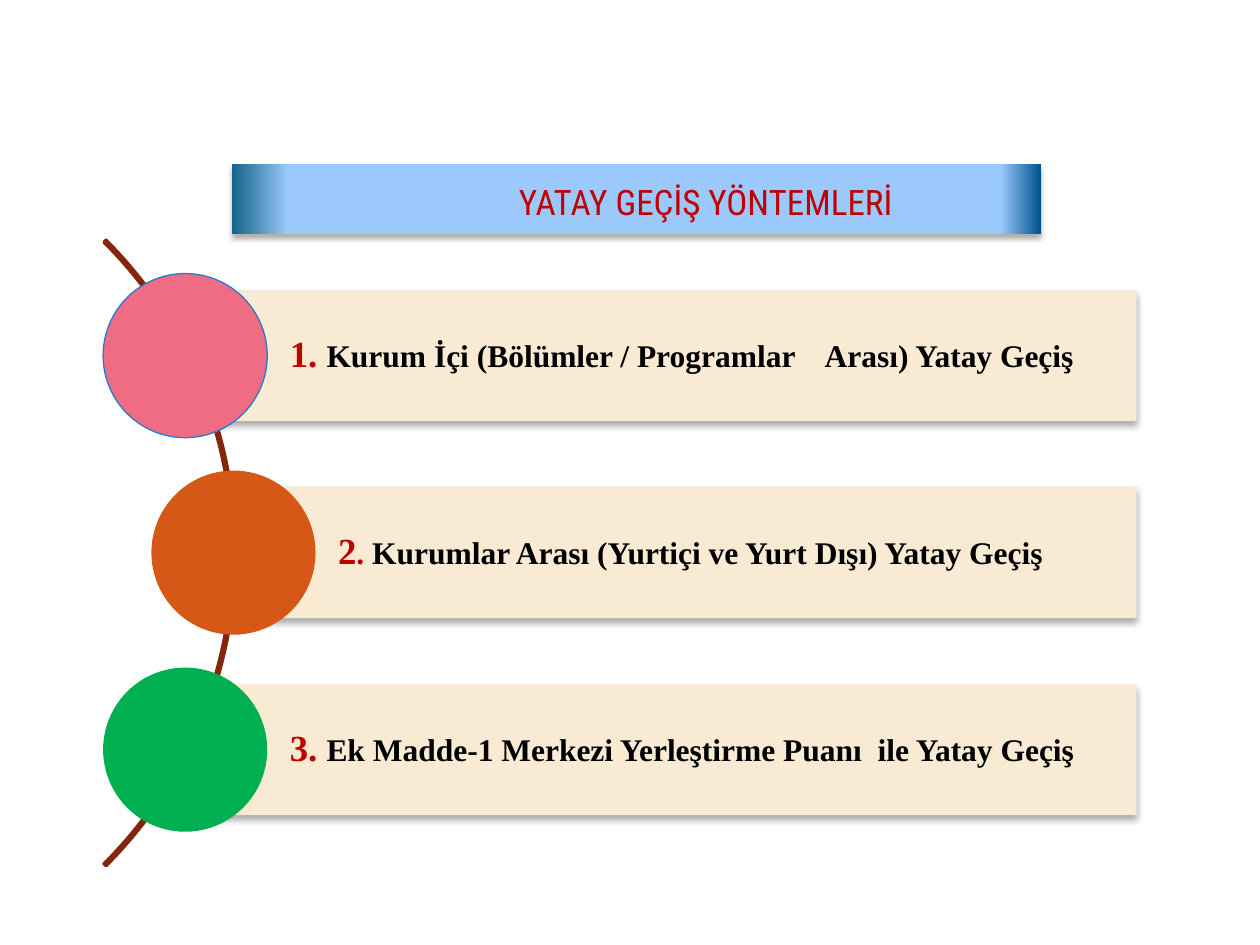
from dataclasses import dataclass

from lxml.etree import SubElement
from pptx import Presentation
from pptx.dml.color import RGBColor
from pptx.enum.shapes import MSO_SHAPE
from pptx.enum.text import MSO_ANCHOR, MSO_AUTO_SIZE, PP_ALIGN
from pptx.oxml.ns import qn
from pptx.util import Pt


@dataclass(frozen=True)
class Theme:
    heading_font: str = "Roboto Condensed"
    body_font: str = "Times New Roman"
    heading_size: int = 20
    number_size: int = 21
    method_size: int = 18
    accent: str = "C00000"
    ink: str = "000000"
    bar: str = "F9EAD3"
    arc: str = "84260C"
    outline: str = "237CCE"
    shadow: str = "000000"
    circles: tuple = ("F06C82", "D55816", "00B050")
    banner: tuple = ((0, "126489"), (7, "9BC9FB"), (95, "9BC9FB"), (100, "00518E"))


def add_shadow(shape):
    shape.shadow.inherit = False
    effects = shape._element.spPr.find(qn("a:effectLst"))
    outer = SubElement(effects, qn("a:outerShdw"), blurRad=str(Pt(3.5)),
                       dist=str(Pt(2.2)), dir="5400000", algn="t", rotWithShape="0")
    color = SubElement(outer, qn("a:srgbClr"), val=theme.shadow)
    SubElement(color, qn("a:alpha"), val="32000")


def add_run(paragraph, text, font, size, color, bold):
    run = paragraph.add_run()
    run.text = text
    run.font.name = font
    run.font.size = Pt(size)
    run.font.bold = bold
    run.font.color.rgb = RGBColor.from_string(color)


theme = Theme()
deck = Presentation()
deck.slide_width, deck.slide_height = Pt(720), Pt(540)
slide = deck.slides.add_slide(deck.slide_layouts[5])

arc = slide.shapes.add_shape(MSO_SHAPE.BLOCK_ARC, Pt(-370.8), Pt(63.3), Pt(505.4), Pt(505.4))
for index, value in enumerate((189, 27, 0.003)):
    arc.adjustments[index] = value
arc.shadow.inherit = False
arc.fill.background()
arc.line.color.rgb = RGBColor.from_string(theme.arc)
arc.line.width = Pt(2)

methods = (
    (105.8, (("1. ", theme.number_size),), "Kurum İçi (Bölümler / Programlar\tArası) Yatay Geçiş"),
    (133.4, (("2", theme.number_size), (". ", theme.method_size)),
     "Kurumlar Arası (Yurtiçi ve Yurt Dışı) Yatay Geçiş"),
    (105.8, (("3. ", theme.number_size),), "Ek Madde-1 Merkezi Yerleştirme Puanı  ile Yatay Geçiş"),
)
bar_right, bar_height, first_top, step = 649.6, 75, 165.7, 112.6
diameter = 93.8

for row, (left, number, method) in enumerate(methods):
    top = first_top + row * step
    bar = slide.shapes.add_shape(MSO_SHAPE.RECTANGLE, Pt(left), Pt(top),
                                 Pt(bar_right - left), Pt(bar_height))
    bar.fill.solid()
    bar.fill.fore_color.rgb = RGBColor.from_string(theme.bar)
    bar.line.fill.background()
    add_shadow(bar)
    frame = bar.text_frame
    frame.word_wrap = True
    frame.vertical_anchor = MSO_ANCHOR.MIDDLE
    frame.margin_left = Pt(59.8)
    frame.margin_top = frame.margin_right = frame.margin_bottom = Pt(4.3)
    paragraph = frame.paragraphs[0]
    paragraph.alignment = PP_ALIGN.LEFT
    paragraph.line_spacing = 0.9
    if "\t" in method:
        tabs = SubElement(paragraph._p.get_or_add_pPr(), qn("a:tabLst"))
        SubElement(tabs, qn("a:tab"), pos=str(Pt(305.7)), algn="l")
    for text, size in number:
        add_run(paragraph, text, theme.body_font, size, theme.accent, True)
    add_run(paragraph, method, theme.body_font, theme.method_size, theme.ink, True)

    circle = slide.shapes.add_shape(MSO_SHAPE.OVAL, Pt(left - diameter / 2),
                                    Pt(top + (bar_height - diameter) / 2),
                                    Pt(diameter), Pt(diameter))
    circle.shadow.inherit = False
    circle.fill.solid()
    circle.fill.fore_color.rgb = RGBColor.from_string(theme.circles[row])
    if row == 0:
        circle.line.color.rgb = RGBColor.from_string(theme.outline)
        circle.line.width = Pt(0.75)
    else:
        circle.line.fill.background()

heading = slide.shapes.title
heading.left, heading.top, heading.width, heading.height = Pt(132.5), Pt(93.6), Pt(462.3), Pt(40.3)
heading.fill.gradient()
heading.fill.gradient_angle = 0
stops = heading._element.spPr.find(qn("a:gradFill")).find(qn("a:gsLst"))
for stop in list(stops):
    stops.remove(stop)
for position, color in theme.banner:
    stop = SubElement(stops, qn("a:gs"), pos=str(position * 1000))
    SubElement(stop, qn("a:srgbClr"), val=color)
heading.line.fill.background()
add_shadow(heading)
frame = heading.text_frame
frame.auto_size = MSO_AUTO_SIZE.NONE
frame.word_wrap = True
frame.vertical_anchor = MSO_ANCHOR.MIDDLE
frame.margin_left, frame.margin_right = Pt(164), Pt(7.2)
frame.margin_top, frame.margin_bottom = Pt(5), Pt(2)
paragraph = frame.paragraphs[0]
paragraph.alignment = PP_ALIGN.LEFT
add_run(paragraph, "YATAY GEÇİŞ YÖNTEMLERİ", theme.heading_font,
        theme.heading_size, theme.accent, False)

deck.save("out.pptx")
